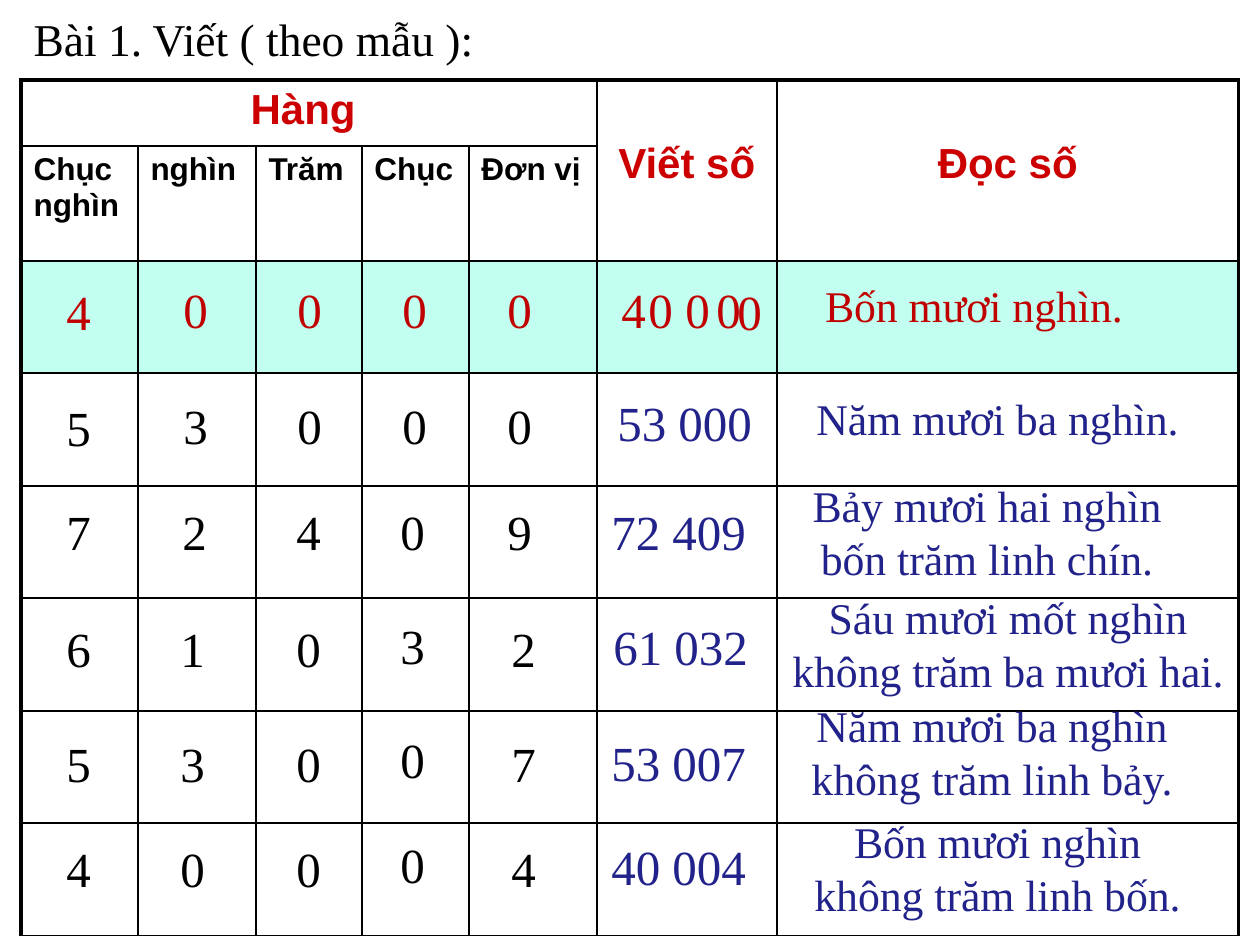
from dataclasses import dataclass
from itertools import accumulate

from lxml import etree
from pptx import Presentation
from pptx import util as u
from pptx.dml.color import RGBColor
from pptx.enum import text
from pptx.oxml.ns import qn


@dataclass(frozen=True)
class Theme:
    serif: str = "Times New Roman"
    sans: str = "Arial"
    black: str = "000000"
    heading: str = "CC0000"
    sample: str = "C00000"
    answer: str = "22228B"
    highlight: str = "C2FFF0"
    title_size: int = 26
    digit_size: int = 28
    reading_size: int = 25
    heading_size: int = 24
    place_size: int = 18
    thin: float = 1
    thick: float = 2.25


T = Theme()
LEFT, CENTER = text.PP_ALIGN.LEFT, text.PP_ALIGN.CENTER
COLUMNS = [117, 118, 106, 107, 128, 180, 462]
ROWS = [66, 115] + [112, 113] * 3
PLACES = ["Chục nghìn", "nghìn", "Trăm", "Chục", "Đơn vị"]

SAMPLE_LEFTS = [54, 171, 285, 390, 495]
MIDDLE_LEFTS = [54, 170, 284, 388, 495]
LOWER_LEFTS = [54, 168, 284, 388, 499]
DIGIT_ROWS = [
    ("40000", SAMPLE_LEFTS, [275, 273, 273, 273, 273], T.sample),
    ("53000", SAMPLE_LEFTS, [391, 389, 389, 389, 389], T.black),
    ("72409", MIDDLE_LEFTS, [495] * 5, T.black),
    ("61032", LOWER_LEFTS, [612, 612, 612, 609, 612], T.black),
    ("53007", LOWER_LEFTS, [727, 727, 727, 723, 727], T.black),
    ("40004", LOWER_LEFTS, [832, 832, 832, 828, 832], T.black),
]
SAMPLE_NUMBER = [("4", 609, 273), ("0", 636, 273), ("0", 673, 273),
                 ("0", 704, 273), ("0", 725, 275)]
NUMBERS = [
    ("53 000", 605, 386),
    ("72 409", 599, 495),
    ("61 032", 601, 610),
    ("53 007", 599, 726),
    ("40 004", 599, 830),
]
READINGS = [
    ("Bốn mươi nghìn.", 804, 273, 340, T.sample),
    ("Năm mươi ba nghìn.", 798, 386, 399, T.answer),
    ("Bảy mươi hai nghìn bốn trăm linh chín.", 798, 473, 378, T.answer),
    ("Sáu mươi mốt nghìn không trăm ba mươi hai.", 777, 585, 462, T.answer),
    ("Năm mươi ba nghìn không trăm linh bảy. ", 798, 693, 388, T.answer),
    ("Bốn mươi nghìn không trăm linh bốn.", 798, 809, 399, T.answer),
]


def px(n):
    return u.Emu(round(n * 914400 / 126))


def write(tf, words, size, color, font=T.serif, bold=False, align=LEFT):
    p = tf.paragraphs[0]
    p.text = words
    p.alignment = align
    p.font.name = font
    p.font.size = u.Pt(size)
    p.font.bold = bold
    p.font.color.rgb = RGBColor.from_string(color)


def add_text(s, words, left, top, width, height, size, color, align=LEFT):
    sp = s.shapes.add_textbox(px(left), px(top), px(width), px(height))
    sp.text_frame.word_wrap = True
    write(sp.text_frame, words, size, color, align=align)


def set_title(s, words):
    sp = s.shapes.title
    sp.left, sp.top, sp.width, sp.height = px(21), px(5), px(470), px(68)
    tf = sp.text_frame
    tf.auto_size = text.MSO_AUTO_SIZE.NONE
    tf.vertical_anchor = text.MSO_ANCHOR.TOP
    write(tf, words, T.title_size, T.black)


def set_borders(cell, row, col):
    outer = {
        "a:lnL": col == 0,
        "a:lnR": col == len(COLUMNS) - 1,
        "a:lnT": row == 0,
        "a:lnB": False,
    }
    tcPr = cell._tc.get_or_add_tcPr()
    for side, edge in outer.items():
        width = u.Pt(T.thick if edge else T.thin)
        ln = etree.SubElement(tcPr, qn(side), w=str(width))
        fill = etree.SubElement(ln, qn("a:solidFill"))
        etree.SubElement(fill, qn("a:srgbClr"), val=T.black)


def fill_cell(cell, row):
    if row == 2:
        cell.fill.solid()
        cell.fill.fore_color.rgb = RGBColor.from_string(T.highlight)
    else:
        cell.fill.background()


def add_place_table(s):
    frame = s.shapes.add_table(len(ROWS), len(COLUMNS), px(21), px(80),
                               px(sum(COLUMNS)), px(sum(ROWS)))
    table = frame.table
    table.first_row = table.horz_banding = False
    edges = [0, *accumulate(COLUMNS)]
    for col, (a, b) in enumerate(zip(edges, edges[1:])):
        table.columns[col].width = px(b) - px(a)
    for row, height in enumerate(ROWS):
        table.rows[row].height = px(height)
        for col in range(len(COLUMNS)):
            cell = table.cell(row, col)
            set_borders(cell, row, col)
            fill_cell(cell, row)
    table.cell(0, 0).merge(table.cell(0, 4))
    for col, words in [(0, "Hàng "), (5, "Viết số"), (6, "Đọc số")]:
        cell = table.cell(0, col)
        write(cell.text_frame, words, T.heading_size, T.heading, T.sans, True, CENTER)
        if col:
            cell.merge(table.cell(1, col))
            cell.margin_top = px(61)
    for col, words in enumerate(PLACES):
        write(table.cell(1, col).text_frame, words, T.place_size, T.black, T.sans, True)


def add_digits(s):
    for digits, lefts, tops, color in DIGIT_ROWS:
        for digit, left, top in zip(digits, lefts, tops):
            add_text(s, digit, left, top, 63, 72, T.digit_size, color)


def add_numbers(s):
    for digit, left, top in SAMPLE_NUMBER:
        add_text(s, digit, left, top, 53, 72, T.digit_size, T.sample)
    for number, left, top in NUMBERS:
        add_text(s, number, left, top, 175, 72, T.digit_size, T.answer)


def add_readings(s):
    for row, (words, left, top, width, color) in enumerate(READINGS):
        height = 66 if row < 2 else 118
        add_text(s, words, left, top, width, height, T.reading_size, color, CENTER)


def main():
    prs = Presentation()
    prs.slide_width, prs.slide_height = u.Inches(10), u.Inches(7.5)
    s = prs.slides.add_slide(prs.slide_layouts[5])
    set_title(s, "Bài 1. Viết ( theo mẫu ):")
    add_place_table(s)
    add_digits(s)
    add_numbers(s)
    add_readings(s)
    prs.save("out.pptx")


if __name__ == "__main__":
    main()
